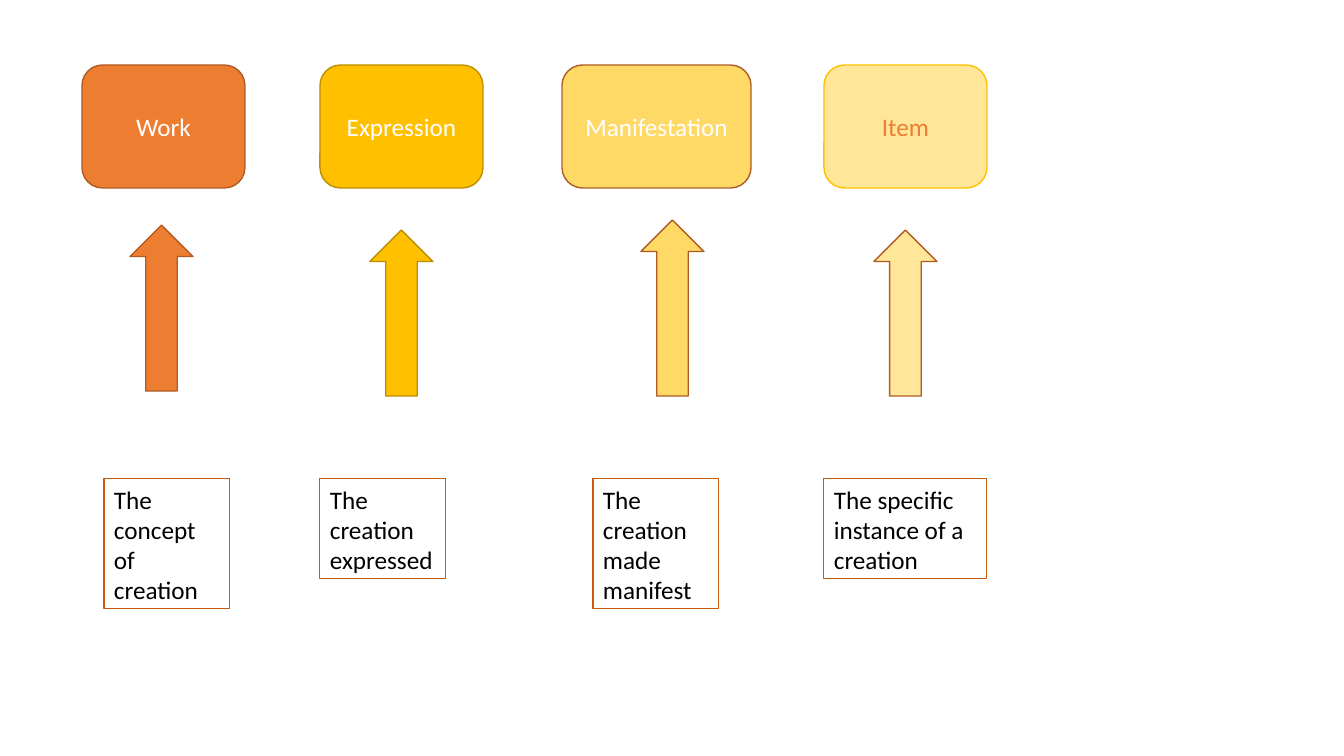
from pptx import Presentation
from pptx.dml.color import RGBColor
from pptx.enum.shapes import MSO_SHAPE
from pptx.enum.text import MSO_ANCHOR, MSO_AUTO_SIZE, PP_ALIGN
from pptx.util import Pt

ROUNDED, ARROW = MSO_SHAPE.ROUNDED_RECTANGLE, MSO_SHAPE.UP_ARROW
CENTER, LEFT = PP_ALIGN.CENTER, PP_ALIGN.LEFT
MIDDLE, FIT_SHAPE = MSO_ANCHOR.MIDDLE, MSO_AUTO_SIZE.SHAPE_TO_FIT_TEXT

EMU_PER_PX = 914400 / 100.8
SLIDE_WIDTH, SLIDE_HEIGHT = 1344, 756
ENTITY_TOP, ENTITY_HEIGHT = 65, 123
ARROW_WIDTH = 63
NOTE_TOP, NOTE_PADDING, LINE_HEIGHT = 479, 10, 30
NOTE_LINE = "C55A11"

# Box: left, width, fill, line, text colour. Arrow: left, top, bottom, line.
# Note: left, width, number of lines, paragraphs.
ENTITIES = [
    ("Work", (82, 163, "ED7D31", "AF5C24", "FFFFFF"), (130, 225, 391, "AF5C24"),
     (104, 126, 4, ["The concept of creation"])),
    ("Expression", (320, 163, "FFC000", "BD8E00", "FFFFFF"), (370, 230, 396, "BD8E00"),
     (320, 126, 3, ["The creation", "expressed"])),
    ("Manifestation", (562, 189, "FFD966", "AF5C24", "FFFFFF"), (641, 220, 396, "AF5C24"),
     (593, 126, 4, ["The creation made manifest"])),
    ("Item", (824, 163, "FFE699", "FFC000", "ED7D31"), (874, 230, 396, "AF5C24"),
     (824, 163, 3, ["The specific instance of a creation"])),
]


def px(length):
    return round(length * EMU_PER_PX)


def color(hex_string):
    return RGBColor.from_string(hex_string)


def set_line(shape, line_color, points):
    shape.line.color.rgb = color(line_color)
    shape.line.width = Pt(points)


def add_filled_shape(kind, left, top, width, height, fill, line_color):
    shape = slide.shapes.add_shape(kind, px(left), px(top), px(width), px(height))
    shape.shadow.inherit = False
    shape.fill.solid()
    shape.fill.fore_color.rgb = color(fill)
    set_line(shape, line_color, 1)
    return shape


def write(frame, lines, text_color, alignment):
    frame.word_wrap = True
    frame.text = "\n".join(lines)
    for para in frame.paragraphs:
        para.alignment = alignment
        para.font.name = "Calibri"
        para.font.size = Pt(18)
        para.font.color.rgb = color(text_color)


deck = Presentation()
deck.slide_width, deck.slide_height = px(SLIDE_WIDTH), px(SLIDE_HEIGHT)
slide = deck.slides.add_slide(deck.slide_layouts[6])

for name, box_style, arrow_style, note_style in ENTITIES:
    left, width, fill, line_color, text_color = box_style
    box = add_filled_shape(ROUNDED, left, ENTITY_TOP, width, ENTITY_HEIGHT, fill, line_color)
    box.text_frame.vertical_anchor = MIDDLE
    write(box.text_frame, [name], text_color, CENTER)

    left, top, bottom, line_color = arrow_style
    add_filled_shape(ARROW, left, top, ARROW_WIDTH, bottom - top, fill, line_color)

    left, width, line_count, lines = note_style
    height = line_count * LINE_HEIGHT + NOTE_PADDING
    note = slide.shapes.add_textbox(px(left), px(NOTE_TOP), px(width), px(height))
    set_line(note, NOTE_LINE, 0.75)
    write(note.text_frame, lines, "000000", LEFT)
    note.text_frame.auto_size = FIT_SHAPE

deck.save("out.pptx")
